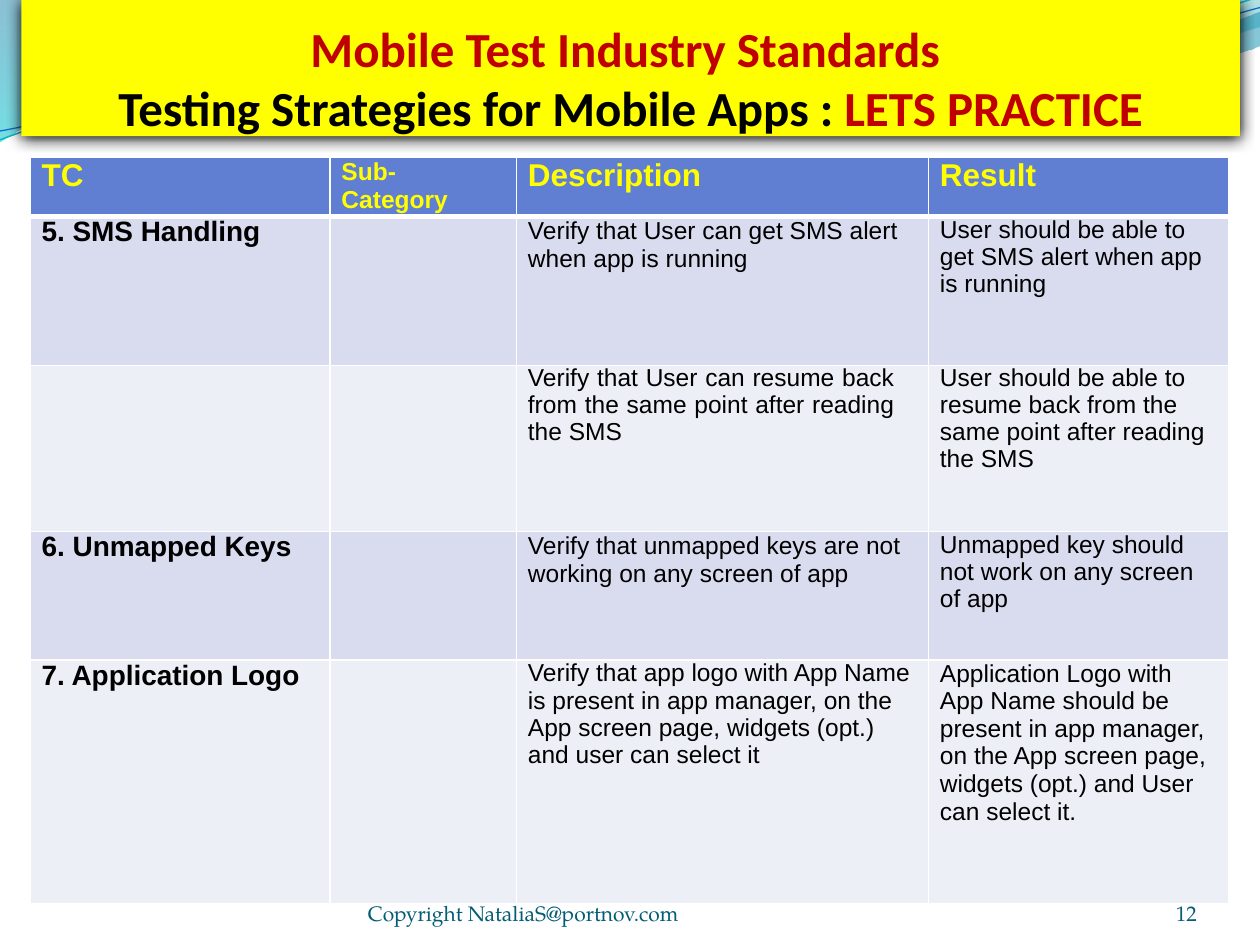
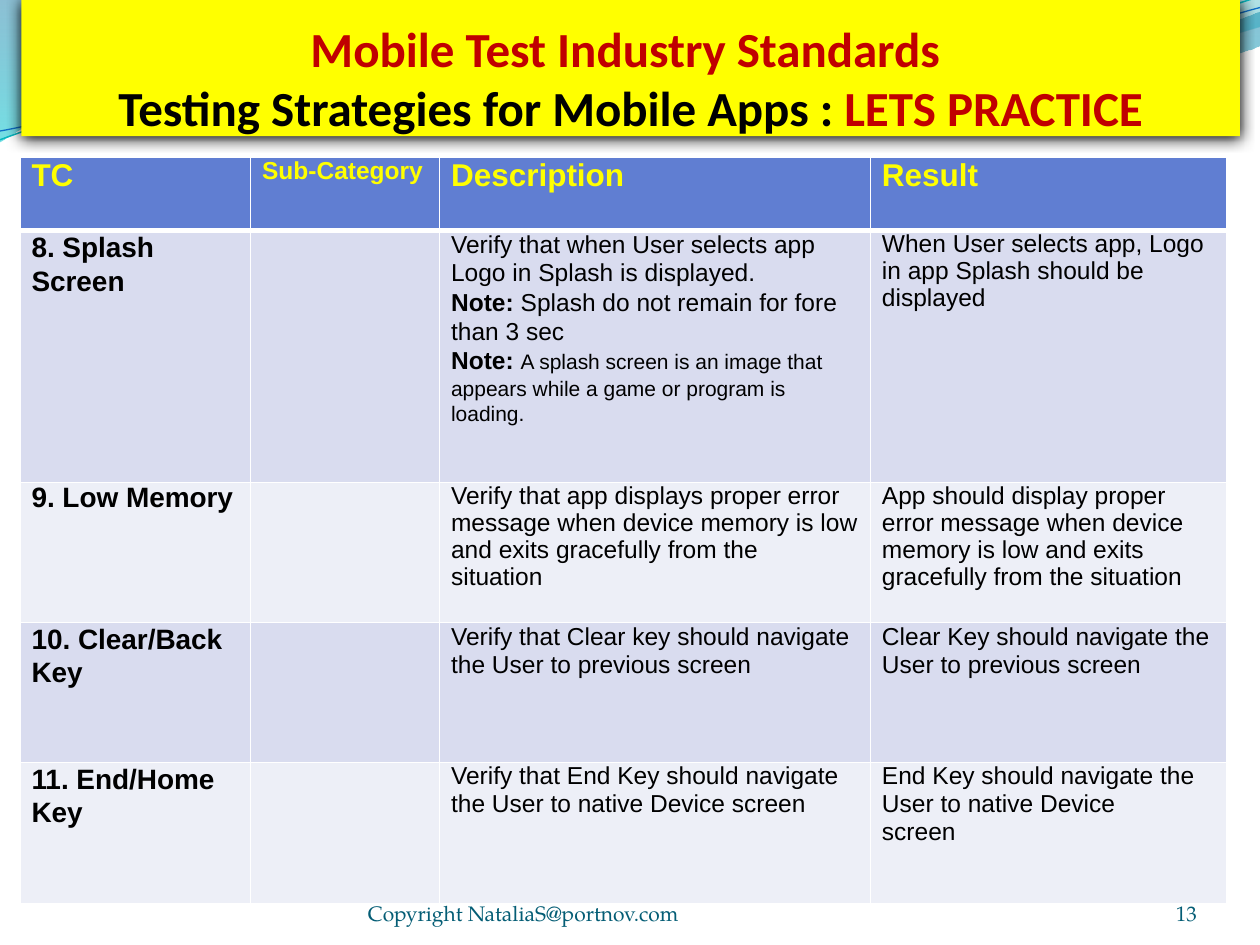
from lxml import etree
from pptx import Presentation
from pptx.dml.color import RGBColor
from pptx.enum import text
from pptx.oxml import ns, parse_xml
from pptx.util import Inches, Pt

YELLOW = RGBColor(0xFF, 0xFF, 0x00)
RED = RGBColor(0xC0, 0x00, 0x00)
BLACK = RGBColor(0x00, 0x00, 0x00)
HEADER_BLUE = RGBColor(0x60, 0x7E, 0xD2)
BAND_DARK = RGBColor(0xD9, 0xDC, 0xEF)
BAND_LIGHT = RGBColor(0xED, 0xEF, 0xF7)
WHITE = RGBColor(0xFF, 0xFF, 0xFF)
FOOTER_TEAL = RGBColor(0x04, 0x5D, 0x75)
WAVE_TEAL = RGBColor(0x0A, 0xB8, 0xBF)
WAVE_BLUE = RGBColor(0x0F, 0x6F, 0xC6)

TIGHT = 0.98
FIXED = Pt(16)
LABEL_SPACING = Pt(19)
FOOTER = "Copyright NataliaS@portnov.com"

# Each wave: a start point, then straight (2 numbers) or cubic (6 numbers) steps.
BROAD_WAVE = [(0, 0), (4.4, -0.01), (4.76, 0.17, 6.64, 0.63, 7.58, 0.63),
              (8.53, 0.63, 9.58, 0.26, 10, 0.09), (10.01, 0.36),
              (9.83, 0.44, 8.7, 0.76, 7.46, 0.75),
              (6.22, 0.75, 3.82, 0.28, 2.57, 0.34),
              (1.29, 0.36, 0.46, 0.83, -0.01, 1.13), (0, 0)]
RIGHT_WAVE = [(4.79, -0.01), (5.09, 0.11, 6.82, 0.62, 7.69, 0.65),
              (8.56, 0.69, 9.61, 0.32, 10, 0.21), (10, 0), (4.79, -0.01)]
UPPER_LINE = [(0, 1.11), (0.48, 0.93, 1.58, 0.57, 2.77, 0.52),
              (3.95, 0.47, 5.93, 0.89, 7.13, 0.8),
              (8.33, 0.71, 9.38, 0.15, 9.98, -0.02)]
LOWER_LINE = [(0, 1.04), (0.47, 0.96, 1.64, 0.61, 2.83, 0.56),
              (4.03, 0.51, 5.97, 0.84, 7.17, 0.75),
              (8.36, 0.67, 9.41, 0.21, 10, 0.06)]

# Cells hold paragraphs: (text or runs, format).
SPLASH_NOTES = [
    ("Verify that when User selects app Logo in Splash is displayed.", {}),
    ([("Note: ", {"bold": True}), ("Splash do not remain for fore than 3 sec", {})],
     {"spacing": Pt(17)}),
    ([("Note: ", {"bold": True}), ("A splash screen is an image that", {"size": 12})],
     {"spacing": Pt(16.4)}),
    ("appears while a game or program is loading.",
     {"size": 12, "spacing": Pt(14), "before": 1}),
]

SMS_TABLE = {
    "box": (0.24, 1.25), "columns": (2.38, 1.48, 3.27, 2.38),
    "heights": (0.47, 1.18, 1.32, 1.02, 1.93),
    "subcategory": ("Sub- Category", {"size": 14, "spacing": FIXED, "right": 0.3}),
    "rows": [
        ("5. SMS Handling",
         [("Verify that User can get SMS alert when app is running", {})],
         [("User should be able to get SMS alert when app is running",
           {"spacing": TIGHT})]),
        ("",
         [("Verify that User can resume back from the same point after reading the SMS",
           {"spacing": TIGHT, "right": 0.27, "align": text.PP_ALIGN.JUSTIFY})],
         [("User should be able to resume back from the same point after reading the SMS",
           {"spacing": TIGHT})]),
        ("6. Unmapped Keys",
         [("Verify that unmapped keys are not working on any screen of app", {})],
         [("Unmapped key should not work on any screen of app", {"spacing": TIGHT})]),
        ("7. Application Logo",
         [("Verify that app logo with App Name is present in app manager, on the App "
           "screen page, widgets (opt.) and user can select it", {"spacing": 0.99})],
         [("Application Logo with App Name should be present in app manager, on the "
           "App screen page, widgets (opt.) and User can select it.", {"spacing": 1.0})]),
    ],
}

SPLASH_TABLE = {
    "box": (0.16, 1.25), "columns": (1.83, 1.5, 3.42, 2.83),
    "heights": (0.58, 2, 1.11, 1.11, 1.12),
    "subcategory": ("Sub-Category", {"size": 14}),
    "rows": [
        ("8. Splash Screen", SPLASH_NOTES,
         [("When User selects app, Logo in app Splash should be displayed",
           {"spacing": TIGHT})]),
        ("9. Low Memory",
         [("Verify that app displays proper error message when device memory is low "
           "and exits gracefully from the\nsituation",
           {"spacing": TIGHT, "right": 0.05})],
         [("App should display proper error message when device memory is low and "
           "exits gracefully from the situation", {"spacing": TIGHT})]),
        ("10. Clear/Back Key",
         [("Verify that Clear key should navigate the User to previous screen", {})],
         [("Clear Key should navigate the User to previous screen", {})]),
        ("11. End/Home Key",
         [("Verify that End Key should navigate the User to native Device screen", {})],
         [("End Key should navigate the User to native Device\nscreen", {})]),
    ],
}


def write(paragraph, content, font="Arial", size=14, color=BLACK, bold=False,
          align=None, spacing=None, before=0, left=0, right=0):
    """Write a string, or (text, overrides) runs, with line breaks at newlines."""
    properties = paragraph._p.get_or_add_pPr()
    properties.set("marL", str(Inches(left)))
    properties.set("marR", str(Inches(right)))
    properties.set("indent", "0")
    paragraph.alignment = align
    paragraph.space_before = Pt(before)
    if spacing:
        paragraph.line_spacing = spacing
    runs = [(content, {})] if isinstance(content, str) else content
    for words, overrides in runs:
        for index, line in enumerate(words.split("\n")):
            if index:
                paragraph.add_line_break()
            if not line:
                continue
            run = paragraph.add_run()
            run.text = line
            run.font.name = font
            run.font.size = Pt(overrides.get("size", size))
            run.font.bold = overrides.get("bold", bold)
            run.font.color.rgb = overrides.get("color", color)


def set_frame(frame, anchor, top=0):
    frame.word_wrap = True
    frame.auto_size = text.MSO_AUTO_SIZE.NONE
    frame.vertical_anchor = anchor
    frame.margin_left = frame.margin_right = frame.margin_bottom = 0
    frame.margin_top = Inches(top)


def bend(wave, steps):
    """Merge the three straight segments of each cubic step into one curve."""
    segments = list(wave.element.iter(ns.qn("a:lnTo")))
    for step in steps:
        count = len(step) // 2
        group, segments = segments[:count], segments[count:]
        if count == 3:
            curve = etree.Element(ns.qn("a:cubicBezTo"))
            group[0].addprevious(curve)
            for segment in group:
                curve.append(segment[0])
                segment.getparent().remove(segment)


def add_wave(slide, steps, stops=None, color=None, width=0):
    """Add a gradient area from (position, colour, opacity) stops, or a line."""
    points = [(Inches(step[i]), Inches(step[i + 1]))
              for step in steps for i in range(0, len(step), 2)]
    builder = slide.shapes.build_freeform(*points[0])
    builder.add_line_segments(points[1:], close=bool(stops))
    wave = builder.convert_to_shape()
    bend(wave, steps[1:])
    wave.shadow.inherit = False
    wave.fill.background()
    if stops:
        wave.line.fill.background()
        marks = "".join(
            f'<a:gs pos="{position * 1000}"><a:srgbClr val="{shade}">'
            f'<a:alpha val="{opacity * 1000}"/></a:srgbClr></a:gs>'
            for position, shade, opacity in stops)
        gradient = parse_xml(f'<a:gradFill {ns.nsdecls("a")}><a:gsLst>{marks}</a:gsLst>'
                             '<a:lin ang="5400000" scaled="0"/></a:gradFill>')
        empty_fill = wave.element.spPr.find(ns.qn("a:noFill"))
        empty_fill.getparent().replace(empty_fill, gradient)
    else:
        wave.line.color.rgb = color
        wave.line.width = Pt(width)
    return wave


def add_master_waves(master, slide):
    """Build the waves on a slide and move them behind the master's placeholders."""
    waves = [
        add_wave(slide, BROAD_WAVE, [(0, "0074A1", 45), (100, "00C6CF", 55)]),
        add_wave(slide, RIGHT_WAVE, [(0, "00A1A9", 30), (80, "008BBF", 45)]),
        add_wave(slide, UPPER_LINE, color=WAVE_TEAL, width=0.85),
        add_wave(slide, LOWER_LINE, color=WAVE_BLUE, width=0.75),
    ]
    front = master.placeholders[0].element
    for number, wave in enumerate(waves, start=20):
        wave.element.nvSpPr.cNvPr.id = number
        front.addprevious(wave.element)


def add_title(slide, left, top, width, height):
    title = slide.shapes.title
    title.left, title.top, title.width, title.height = map(
        Inches, (left, top, width, height))
    title.fill.solid()
    title.fill.fore_color.rgb = YELLOW
    title.element.spPr.append(parse_xml(
        f'<a:effectLst {ns.nsdecls("a")}><a:outerShdw blurRad="{Pt(8.5)}" '
        f'dist="{Pt(1)}" dir="5400000" algn="ctr" rotWithShape="0">'
        '<a:srgbClr val="000000"/></a:outerShdw></a:effectLst>'))
    set_frame(title.text_frame, text.MSO_ANCHOR.BOTTOM, top=0.05)
    write(title.text_frame.paragraphs[0],
          [("Mobile Test Industry Standards \n", {}),
           ("Testing Strategies for Mobile Apps : ", {"color": BLACK}),
           ("LETS PRACTICE", {})],
          font="Calibri", size=28, color=RED, bold=True, align=text.PP_ALIGN.CENTER)


def style_cell(cell, fill, top, bottom):
    """Fill a cell and give it white borders, with top and bottom widths in points."""
    cell.fill.solid()
    cell.fill.fore_color.rgb = fill
    cell.margin_left = cell.margin_right = cell.margin_top = cell.margin_bottom = 0
    properties = cell._tc.get_or_add_tcPr()
    borders = (("lnL", 1), ("lnR", 1), ("lnT", top), ("lnB", bottom))
    for index, (side, width) in enumerate(borders):
        border = etree.Element(ns.qn(f"a:{side}"), w=str(Pt(width)))
        solid = etree.SubElement(border, ns.qn("a:solidFill"))
        etree.SubElement(solid, ns.qn("a:srgbClr"), val=str(WHITE))
        properties.insert(index, border)


def write_cell(cell, paragraphs, **defaults):
    for index, (content, options) in enumerate(paragraphs):
        frame = cell.text_frame
        paragraph = frame.add_paragraph() if index else frame.paragraphs[0]
        write(paragraph, content, **{"left": 0.09, "right": 0.1, **defaults, **options})


def add_test_table(slide, box, columns, heights, subcategory, rows):
    left, top = box
    table = slide.shapes.add_table(
        len(heights), len(columns), Inches(left), Inches(top),
        Inches(sum(columns)), Inches(sum(heights))).table
    for column, width in zip(table.columns, columns):
        column.width = Inches(width)
    for number, (row, height) in enumerate(zip(table.rows, heights)):
        row.height = Inches(height)
        fill = HEADER_BLUE if number == 0 else BAND_DARK if number % 2 else BAND_LIGHT
        for cell in row.cells:
            style_cell(cell, fill, 3 if number == 1 else 1, 3 if number == 0 else 1)
    headings = [("TC", {}), subcategory, ("Description", {}), ("Result", {})]
    for column, heading in enumerate(headings):
        write_cell(table.cell(0, column), [heading], size=18, color=YELLOW, bold=True)
    for number, (label, description, result) in enumerate(rows, start=1):
        if label:
            spacing = LABEL_SPACING if label.endswith(("Screen", "Key")) else None
            write_cell(table.cell(number, 0), [(label, {})],
                       size=16, bold=True, spacing=spacing)
        write_cell(table.cell(number, 2), description, spacing=FIXED)
        write_cell(table.cell(number, 3), result, spacing=FIXED)


def add_footer_text(slide, words, left, width, align):
    box = slide.shapes.add_textbox(Inches(left), Inches(6.95), Inches(width), Inches(0.4))
    set_frame(box.text_frame, text.MSO_ANCHOR.BOTTOM)
    write(box.text_frame.paragraphs[0], words, font="TeX Gyre Pagella", size=12,
          color=FOOTER_TEAL, align=align)


def add_test_slide(presentation, number, table):
    slide = presentation.slides.add_slide(presentation.slide_layouts[5])
    add_title(slide, 0.17, 0, 9.67, 1.08)
    add_test_table(slide, **table)
    add_footer_text(slide, str(number), 8.67, 0.83, text.PP_ALIGN.RIGHT)
    add_footer_text(slide, FOOTER, 2.92, 3.67, text.PP_ALIGN.LEFT)
    return slide


def main():
    presentation = Presentation()
    presentation.slide_width = Inches(10)
    presentation.slide_height = Inches(7.5)
    first_slide = add_test_slide(presentation, 12, SMS_TABLE)
    add_test_slide(presentation, 13, SPLASH_TABLE)
    add_master_waves(presentation.slide_master, first_slide)
    presentation.save("out.pptx")


if __name__ == "__main__":
    main()
